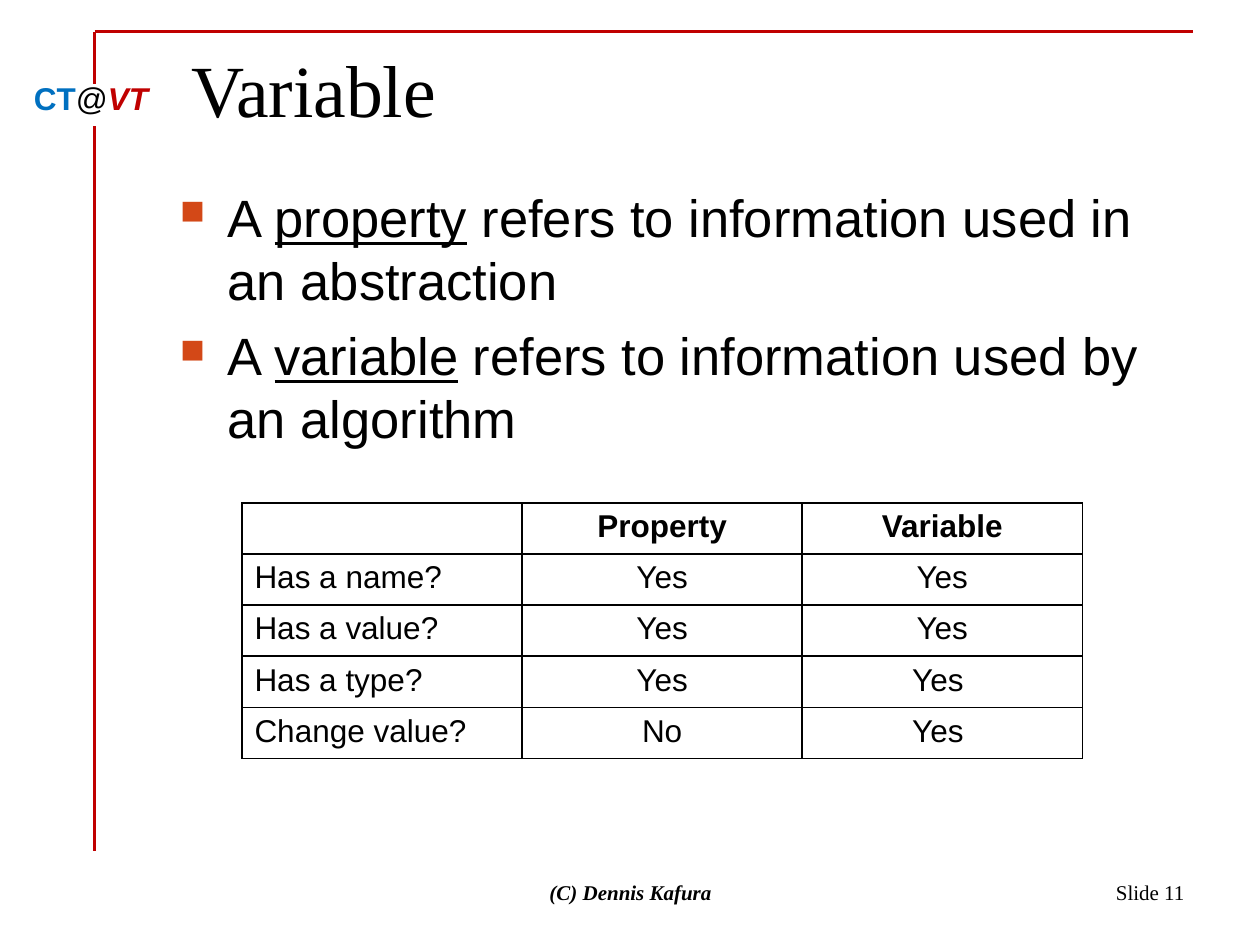
"""Build the slide that compares properties with variables."""
from lxml import etree
from pptx import Presentation
from pptx.dml.color import RGBColor
from pptx.enum import shapes, text
from pptx.oxml import ns
from pptx.util import Inches, Pt

BLACK = RGBColor(0, 0, 0)
RED = RGBColor(0xC0, 0, 0)
BLUE = RGBColor(0, 0x70, 0xC0)
BULLET_COLOR = "D34817"
SANS, SERIF = "Arial", "Times New Roman"
LEFT, CENTER, RIGHT = text.PP_ALIGN.LEFT, text.PP_ALIGN.CENTER, text.PP_ALIGN.RIGHT
TOP, MIDDLE = text.MSO_ANCHOR.TOP, text.MSO_ANCHOR.MIDDLE

RULES = [
    ((0.75, 0.25), (9.47, 0.25), 2),
    ((0.75, 0.25), (0.75, 0.67), 1.75),
    ((0.75, 1), (0.75, 6.75), 1.75),
]
COURSE_MARK = [("CT", BLUE, True, False), ("@", BLACK, False, False), ("VT", RED, True, True)]
LABELS = [
    ("Variable", (1.42, 0.3, 8.08, 0.78), 42, LEFT, TOP, False),
    ("Slide 11", (7.17, 6.83, 2.33, 0.5), 12, RIGHT, MIDDLE, False),
    ("(C) Dennis Kafura", (3.42, 6.83, 3.17, 0.5), 12, CENTER, MIDDLE, True),
]
DEFINITIONS = [
    ("A ", "property", " refers to information used in an abstraction"),
    ("A ", "variable", " refers to information used by an algorithm"),
]
COMPARISON = [
    ("", "Property", "Variable"),
    ("Has a name?", "Yes", "Yes"),
    ("Has a value?", "Yes", "Yes"),
    ("Has a type?", "Yes", "Yes "),
    ("Change value?", "No", "Yes "),
]
TABLE_AT = (1.92, 3.99, 6.67, 2.03)


def set_font(font, name, size, color=BLACK, bold=False, italic=False):
    font.name, font.size = name, Pt(size)
    font.color.rgb = color
    font.bold, font.italic = bold, italic


def add_child(parent, tag, **attributes):
    return etree.SubElement(parent, ns.qn(tag), attributes)


def add_box(page, place, anchor=TOP, wrap=True):
    frame = page.shapes.add_textbox(*map(Inches, place)).text_frame
    frame.word_wrap = wrap
    frame.vertical_anchor = anchor
    return frame


def add_rule(page, start, end, width):
    rule = page.shapes.add_connector(
        shapes.MSO_CONNECTOR.STRAIGHT, *map(Inches, start + end))
    rule.line.color.rgb = RED
    rule.line.width = Pt(width)
    add_child(rule._element.spPr, "a:effectLst")


def add_course_mark(page):
    para = add_box(page, (0.17, 0.58, 1.12, 0.4), wrap=False).paragraphs[0]
    for words, color, bold, italic in COURSE_MARK:
        span = para.add_run()
        span.text = words
        set_font(span.font, SANS, 18, color, bold, italic)


def add_label(page, words, place, size, align, anchor, strong):
    frame = add_box(page, place, anchor)
    frame.text = words
    para = frame.paragraphs[0]
    para.alignment = align
    set_font(para.runs[0].font, SERIF, size, BLACK, strong, strong)


def add_bullet(para):
    properties = para._p.get_or_add_pPr()
    properties.set("marL", str(Inches(0.38)))
    properties.set("indent", str(-Inches(0.38)))
    color = add_child(properties, "a:buClr")
    add_child(color, "a:srgbClr", val=BULLET_COLOR)
    add_child(properties, "a:buSzPct", val="65000")
    add_child(properties, "a:buChar", char="■")


def add_definitions(page):
    frame = add_box(page, (1.33, 1.42, 8.17, 5.08))
    for index, (lead, term, rest) in enumerate(DEFINITIONS):
        para = frame.add_paragraph() if index else frame.paragraphs[0]
        add_bullet(para)
        if index:
            para.space_before = Pt(7)
        for words in (lead, term, rest):
            span = para.add_run()
            span.text = words
            set_font(span.font, SANS, 30)
            span.font.underline = words == term


def add_borders(cell):
    properties = cell._tc.get_or_add_tcPr()
    for position, side in enumerate(("a:lnL", "a:lnR", "a:lnT", "a:lnB")):
        border = etree.Element(ns.qn(side), w=str(Pt(1)))
        fill = add_child(border, "a:solidFill")
        add_child(fill, "a:srgbClr", val=str(BLACK))
        properties.insert(position, border)


def add_comparison(page):
    table = page.shapes.add_table(
        len(COMPARISON), len(COMPARISON[0]), *map(Inches, TABLE_AT)).table
    for row, values in enumerate(COMPARISON):
        for column, words in enumerate(values):
            cell = table.cell(row, column)
            cell.text = words
            cell.fill.background()
            add_borders(cell)
            para = cell.text_frame.paragraphs[0]
            para.alignment = CENTER if column else LEFT
            set_font(para.font, SANS, 18)
            for span in para.runs:
                set_font(span.font, SANS, 18, bold=row == 0)


def main():
    deck = Presentation()
    deck.slide_width, deck.slide_height = Inches(10), Inches(7.5)
    page = deck.slides.add_slide(deck.slide_layouts[6])
    for rule in RULES:
        add_rule(page, *rule)
    add_course_mark(page)
    for label in LABELS:
        add_label(page, *label)
    add_definitions(page)
    add_comparison(page)
    deck.save("out.pptx")


if __name__ == "__main__":
    main()
